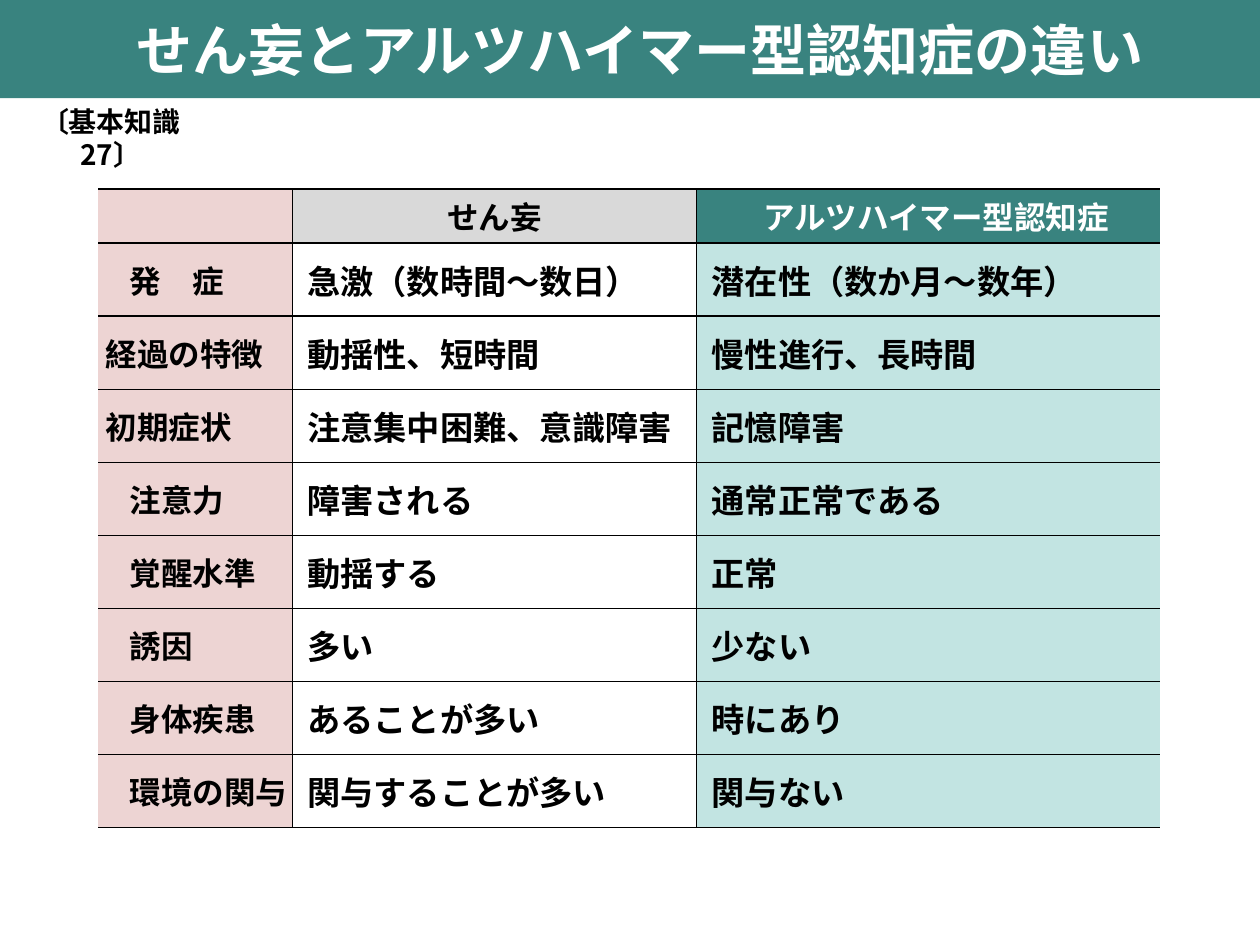
"""Build a slide comparing delirium with Alzheimer-type dementia."""
from lxml import etree
from pptx import Presentation
from pptx.dml.color import RGBColor
from pptx.enum.shapes import MSO_SHAPE
from pptx.enum.text import MSO_ANCHOR, MSO_AUTO_SIZE, PP_ALIGN
from pptx.oxml.ns import qn
from pptx.util import Inches, Pt

LEFT, CENTER = PP_ALIGN.LEFT, PP_ALIGN.CENTER
MIDDLE = MSO_ANCHOR.MIDDLE
NO_FIT = MSO_AUTO_SIZE.NONE
RECTANGLE = MSO_SHAPE.RECTANGLE

FONT = "Noto Sans CJK JP"
COLORS = {
    "teal": "39837F",
    "pale teal": "C2E4E2",
    "pink": "EDD4D3",
    "gray": "D9D9D9",
    "white": "FFFFFF",
    "black": "000000",
}
COLUMN_WIDTHS = [1.54, 3.21, 3.68]
HEADER_HEIGHT, ROW_HEIGHT = 0.43, 0.58
HEADER_FILLS = ["pink", "gray", "teal"]
BODY_FILLS = ["pink", "white", "pale teal"]
COLUMN_EDGES = ["RTB", "LRTB", "LTB"]
WIDE_INDENT, NARROW_INDENT, CELL_INDENT = 0.25, 0.06, 0.12
HEADERS = ["", "せん妄", "アルツハイマー型認知症"]
COMPARISONS = [
    (WIDE_INDENT, "発　症", "急激（数時間～数日）", "潜在性（数か月～数年）"),
    (NARROW_INDENT, "経過の特徴", "動揺性、短時間", "慢性進行、長時間"),
    (NARROW_INDENT, "初期症状", "注意集中困難、意識障害", "記憶障害"),
    (WIDE_INDENT, "注意力", "障害される", "通常正常である"),
    (WIDE_INDENT, "覚醒水準", "動揺する", "正常"),
    (WIDE_INDENT, "誘因", "多い", "少ない"),
    (WIDE_INDENT, "身体疾患", "あることが多い", "時にあり"),
    (WIDE_INDENT, "環境の関与", "関与することが多い", "関与ない"),
]


def rgb(name):
    """Return the named colour."""
    return RGBColor.from_string(COLORS[name])


def write_text(frame, text, size=18, color="black", align=LEFT):
    """Write one bold paragraph into a text frame."""
    paragraph = frame.paragraphs[0]
    paragraph.alignment = align
    run = paragraph.add_run()
    run.text = text
    run.font.size = Pt(size)
    run.font.bold = True
    run.font.color.rgb = rgb(color)
    run.font.name = FONT
    properties = run._r.get_or_add_rPr()
    etree.SubElement(properties, qn("a:ea"), typeface=FONT)


def set_borders(cell, edges):
    """Draw one-point black lines on the given edges and clear the others."""
    properties = cell._tc.get_or_add_tcPr()
    for edge in "LRTB":
        line = etree.SubElement(properties, qn(f"a:ln{edge}"), w=str(Pt(1)))
        if edge in edges:
            fill = etree.SubElement(line, qn("a:solidFill"))
            etree.SubElement(fill, qn("a:srgbClr"), val=COLORS["black"])
        else:
            etree.SubElement(line, qn("a:noFill"))


class SlideBuilder:
    """Add styled elements to the current slide."""

    def __init__(self, presentation):
        """Start a title-only slide."""
        self.slide = presentation.slides.add_slide(presentation.slide_layouts[5])

    def add_title(self, text, left, top, width, height):
        """Place and format the title."""
        title = self.slide.shapes.title
        title.left, title.top = Inches(left), Inches(top)
        title.width, title.height = Inches(width), Inches(height)
        frame = title.text_frame
        frame.word_wrap = False
        frame.auto_size = NO_FIT
        frame.vertical_anchor = MIDDLE
        write_text(frame, text, size=32, color="white", align=CENTER)

    def add_band(self, left, top, width, height, color):
        """Add a plain band behind the title."""
        band = self.slide.shapes.add_shape(
            RECTANGLE, Inches(left), Inches(top), Inches(width), Inches(height))
        band.shadow.inherit = False
        band.fill.solid()
        band.fill.fore_color.rgb = rgb(color)
        band.line.fill.background()
        self.slide.shapes.title.element.addprevious(band.element)

    def add_label(self, text, left, top, width, height):
        """Add a centred, wrapping label."""
        label = self.slide.shapes.add_textbox(
            Inches(left), Inches(top), Inches(width), Inches(height))
        label.text_frame.word_wrap = True
        write_text(label.text_frame, text, size=16, align=CENTER)

    def add_cell(self, cell, text, fill, edges, indent, **text_format):
        """Format one table cell."""
        cell.margin_left = Inches(indent)
        cell.margin_right = cell.margin_top = cell.margin_bottom = 0
        cell.vertical_anchor = MIDDLE
        set_borders(cell, edges)
        cell.fill.solid()
        cell.fill.fore_color.rgb = rgb(fill)
        if text:
            write_text(cell.text_frame, text, **text_format)

    def add_comparison(self, left, top):
        """Add the comparison table."""
        row_count = len(COMPARISONS) + 1
        height = HEADER_HEIGHT + ROW_HEIGHT * len(COMPARISONS)
        table = self.slide.shapes.add_table(
            row_count, len(COLUMN_WIDTHS), Inches(left), Inches(top),
            Inches(sum(COLUMN_WIDTHS)), Inches(height)).table
        table.first_row = table.horz_banding = False
        for column, width in zip(table.columns, COLUMN_WIDTHS):
            column.width = Inches(width)
        for index, row in enumerate(table.rows):
            row.height = Inches(ROW_HEIGHT if index else HEADER_HEIGHT)

        header_indents = [0, 0, CELL_INDENT]
        header_colors = ["black", "black", "white"]
        for column, text in enumerate(HEADERS):
            self.add_cell(table.cell(0, column), text, HEADER_FILLS[column],
                          COLUMN_EDGES[column], header_indents[column],
                          color=header_colors[column], align=CENTER)
        for row, (label_indent, *texts) in enumerate(COMPARISONS, start=1):
            for column, text in enumerate(texts):
                self.add_cell(table.cell(row, column), text, BODY_FILLS[column],
                              COLUMN_EDGES[column],
                              CELL_INDENT if column else label_indent,
                              size=19 if column else 18)


def main():
    """Build and save the presentation."""
    presentation = Presentation()
    presentation.slide_width, presentation.slide_height = Inches(10), Inches(7.5)
    builder = SlideBuilder(presentation)
    builder.add_band(0, 0, 10, 0.78, "teal")
    builder.add_title("せん妄とアルツハイマー型認知症の違い", 0.98, 0.07, 8.2, 0.64)
    builder.add_label("〔基本知識27〕", 0, 0.78, 1.76, 0.37)
    builder.add_comparison(0.78, 1.5)
    presentation.save("out.pptx")


if __name__ == "__main__":
    main()
